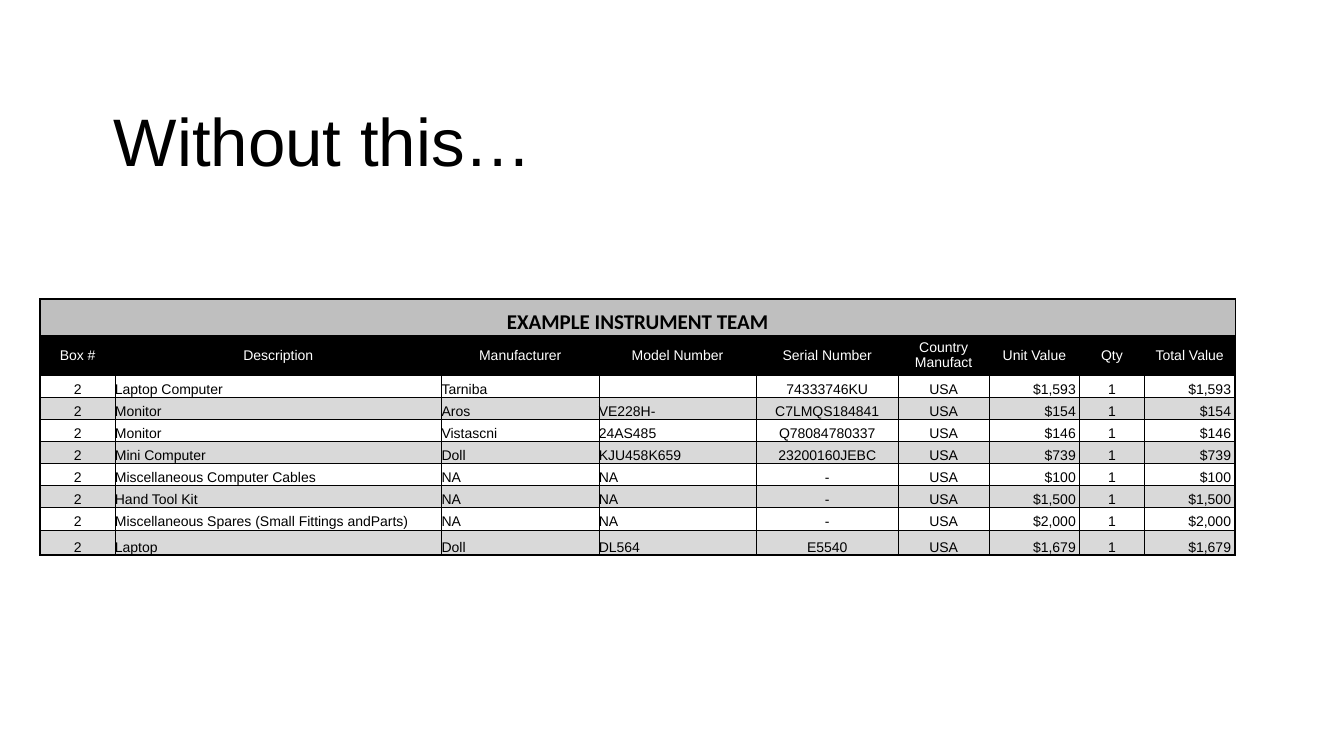
from dataclasses import dataclass

from lxml.etree import SubElement
from pptx import Presentation
from pptx.dml.color import RGBColor as RGB
from pptx.enum.text import MSO_ANCHOR as Anchor, MSO_AUTO_SIZE as AutoSize, PP_ALIGN as Align
from pptx.oxml.ns import qn
from pptx.util import Inches, Pt


@dataclass(frozen=True)
class Theme:
    ink: str = "000000"
    paper: str = "FFFFFF"
    banner: str = "BFBFBF"
    band: str = "D9D9D9"
    font: str = "Arial"
    banner_font: str = "Calibri"
    title_size: float = 48
    banner_size: float = 15
    body_size: float = 10
    thin: float = 0.5
    thick: float = 1.5


THEME = Theme()
COL_WIDTHS = [0.74, 3.24, 1.56, 1.56, 1.41, 0.9, 0.9, 0.64, 0.9]
ROW_HEIGHTS = [0.36, 0.39] + [0.22] * 7 + [0.25]
COL_ALIGNS = [Align.CENTER] + [Align.LEFT] * 3 + [Align.CENTER] * 2 + [Align.RIGHT, Align.CENTER, Align.RIGHT]
PRICE_GAP = 0.04
TABLE_TITLE = "EXAMPLE INSTRUMENT TEAM"
HEADERS = ["Box #", "Description", "Manufacturer", "Model Number", "Serial Number",
           "Country Manufact", "Unit Value", "Qty", "Total Value"]
ITEMS = [
    ("Laptop Computer", "Tarniba", "", "74333746KU", 1593),
    ("Monitor", "Aros", "VE228H-", "C7LMQS184841", 154),
    ("Monitor", "Vistascni", "24AS485", "Q78084780337", 146),
    ("Mini Computer", "Doll", "KJU458K659", "23200160JEBC", 739),
    ("Miscellaneous Computer Cables", "NA", "NA", "-", 100),
    ("Hand Tool Kit", "NA", "NA", "-", 1500),
    ("Miscellaneous Spares (Small Fittings andParts)", "NA", "NA", "-", 2000),
    ("Laptop", "Doll", "DL564", "E5540", 1679),
]


def style_font(font, name, size, color, bold=False):
    font.name, font.size, font.bold = name, Pt(size), bold
    font.color.rgb = RGB.from_string(color)


def set_title(slide, text):
    sp = slide.shapes.title
    sp.left, sp.top, sp.width, sp.height = map(Inches, (1.03, 0.93, 6.45, 0.91))
    tf = sp.text_frame
    tf.text = text
    tf.word_wrap = True
    tf.auto_size = AutoSize.SHAPE_TO_FIT_TEXT
    tf.vertical_anchor = Anchor.MIDDLE
    p = tf.paragraphs[0]
    p.alignment = Align.LEFT
    style_font(p.runs[0].font, THEME.font, THEME.title_size, THEME.ink)


def set_borders(cell, outer_sides):
    tc_pr = cell._tc.get_or_add_tcPr()
    for side in "LRTB":
        width = THEME.thick if side in outer_sides else THEME.thin
        ln = SubElement(tc_pr, qn(f"a:ln{side}"), w=str(Pt(width)))
        fill = SubElement(ln, qn("a:solidFill"))
        SubElement(fill, qn("a:srgbClr"), val=THEME.ink)


def fill_cell(cell, fill):
    if fill:
        cell.fill.solid()
        cell.fill.fore_color.rgb = RGB.from_string(fill)
    else:
        cell.fill.background()


def set_cell_text(cell, text, align, anchor, font, size, color, bold=False):
    cell.margin_left = cell.margin_top = cell.margin_bottom = 0
    cell.margin_right = Inches(PRICE_GAP if align == Align.RIGHT else 0)
    cell.vertical_anchor = anchor
    p = cell.text_frame.paragraphs[0]
    p.text = text
    p.alignment = align
    for r in p.runs:
        style_font(r.font, font, size, color, bold)
    if not text:
        SubElement(p._p, qn("a:endParaRPr"), sz=str(int(size * 100)))


def item_row(item):
    *names, value = item
    price = f"${value:,}"
    return ["2", *names, "USA", price, "1", price]


def outer_sides(row, col):
    edges = {"L": col == 0, "R": col == len(COL_WIDTHS) - 1,
             "T": row == 0, "B": row == len(ROW_HEIGHTS) - 1}
    return {side for side, is_outer in edges.items() if is_outer}


def add_inventory(slide):
    """Add the packing list with its banner, header row and banded items."""
    size = map(Inches, (0.4, 2.97, sum(COL_WIDTHS), sum(ROW_HEIGHTS)))
    table = slide.shapes.add_table(len(ROW_HEIGHTS), len(COL_WIDTHS), *size).table
    table.first_row = table.horz_banding = False
    for column, width in zip(table.columns, COL_WIDTHS):
        column.width = Inches(width)
    for row, height in zip(table.rows, ROW_HEIGHTS):
        row.height = Inches(height)

    fills = [THEME.banner, THEME.ink] + [THEME.band if i % 2 else None for i in range(len(ITEMS))]
    for i, fill in enumerate(fills):
        for j in range(len(COL_WIDTHS)):
            set_borders(table.cell(i, j), outer_sides(i, j))
            fill_cell(table.cell(i, j), fill)

    banner = table.cell(0, 0)
    banner.merge(table.cell(0, len(COL_WIDTHS) - 1))
    set_cell_text(banner, TABLE_TITLE, Align.CENTER, Anchor.BOTTOM,
                  THEME.banner_font, THEME.banner_size, THEME.ink, bold=True)
    for j, header in enumerate(HEADERS):
        set_cell_text(table.cell(1, j), header, Align.CENTER, Anchor.MIDDLE,
                      THEME.font, THEME.body_size, THEME.paper)
    for i, item in enumerate(ITEMS, start=2):
        for j, (text, align) in enumerate(zip(item_row(item), COL_ALIGNS)):
            set_cell_text(table.cell(i, j), text, align, Anchor.BOTTOM,
                          THEME.font, THEME.body_size, THEME.ink)


def main():
    prs = Presentation()
    prs.slide_width, prs.slide_height = Inches(13.33), Inches(7.5)
    s = prs.slides.add_slide(prs.slide_layouts[5])
    set_title(s, "Without this…")
    add_inventory(s)
    prs.save("out.pptx")


if __name__ == "__main__":
    main()
